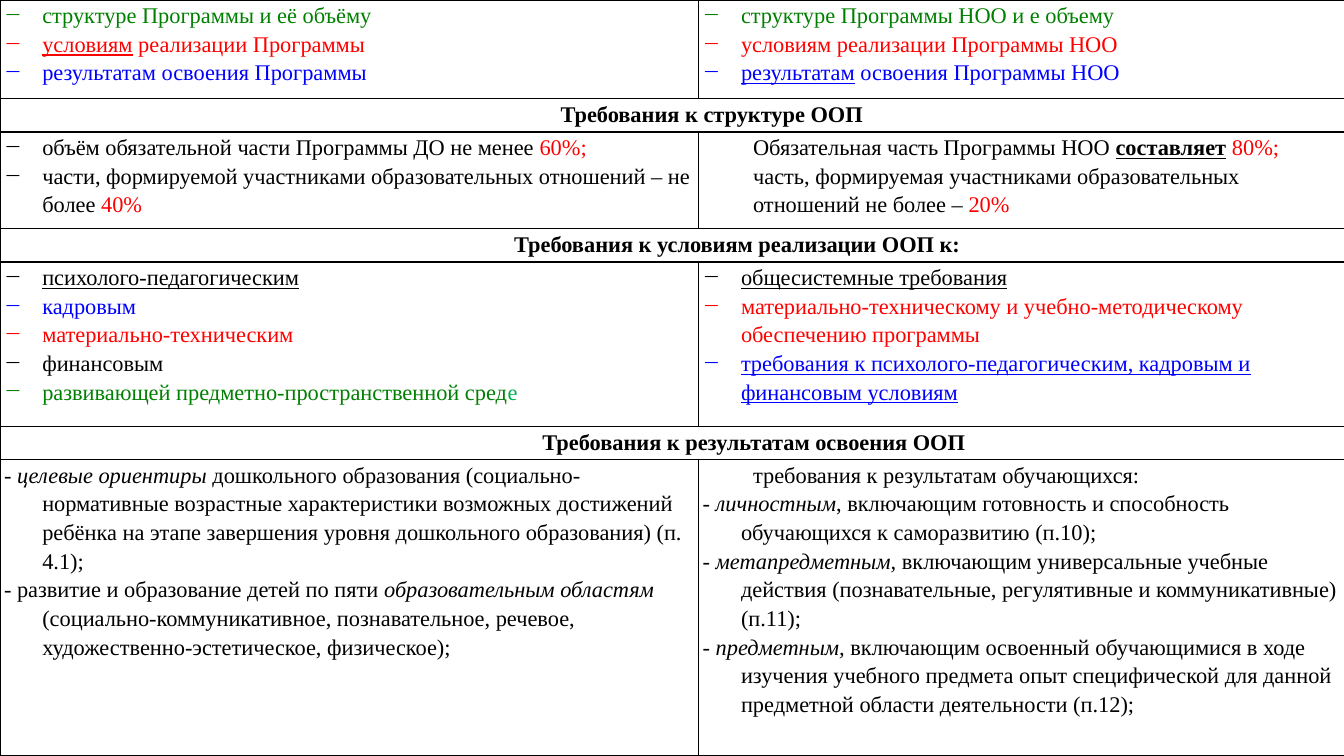
from pptx import Presentation
from pptx import util as u
from pptx.dml.color import RGBColor
from pptx.oxml import parse_xml
from pptx.oxml.ns import nsdecls
from lxml import etree

INK = {"black": "000000", "green": "008000", "red": "FF0000",
       "blue": "0000FF", "teal": "00B050", "white": "FFFFFF"}
FONT = "Times New Roman"

# Paragraph kinds: left margin, first-line indent, bullet
KINDS = {"dash": (0.38, -0.38, "−"), "hang": (0.38, -0.38, None), "plain": (0.5, 0, None)}

# A paragraph is (kind, run, run, ...); a run is (text, colour, styles)
# A row with one entry is a heading: (text, left margin)
ROWS = [
    (0.98, [
        [("dash", ("структуре Программы и её объёму", "green", "")),
         ("dash", ("условиям", "red", "u"), (" реализации Программы", "red", "")),
         ("dash", ("результатам освоения Программы", "blue", ""))],
        [("dash", ("структуре Программы НОО и е объему", "green", "")),
         ("dash", ("условиям реализации Программы НОО", "red", "")),
         ("dash", ("результатам", "blue", "u"), (" освоения Программы НОО", "blue", ""))],
    ]),
    (0.33, [("Требования к структуре ООП", 5.52)]),
    (0.96, [
        [("dash", ("объём обязательной части Программы ДО не менее ", "black", ""),
          ("60%;", "red", "")),
         ("dash", ("части, формируемой участниками образовательных отношений – не более ",
                   "black", ""), ("40%", "red", ""))],
        [("plain", ("Обязательная часть Программы НОО ", "black", ""),
          ("составляет", "black", "bu"), (" ", "black", "b"), ("80%;", "red", "")),
         ("plain", ("часть, формируемая участниками образовательных отношений не более – ",
                    "black", ""), ("20%", "red", ""))],
    ]),
    (0.33, [("Требования к условиям реализации ООП к:", 5.06)]),
    (1.63, [
        [("dash", ("психолого-педагогическим", "black", "u")),
         ("dash", ("кадровым", "blue", "")),
         ("dash", ("материально-техническим", "red", "")),
         ("dash", ("финансовым", "black", "")),
         ("dash", ("развивающей предметно-пространственной сред", "green", ""),
          ("е", "teal", ""))],
        [("dash", ("общесистемные требования", "black", "u")),
         ("dash", ("материально-техническому и учебно-методическому обеспечению программы",
                   "red", "")),
         ("dash", ("требования к психолого-педагогическим, кадровым и финансовым условиям",
                   "blue", "u"))],
    ]),
    (0.33, [("Требования к результатам освоения ООП", 5.34)]),
    (2.94, [
        [("hang", ("- целевые ориентиры", "black", "i"),
          (" дошкольного образования (социально-нормативные возрастные характеристики "
           "возможных достижений ребёнка на этапе завершения уровня дошкольного "
           "образования) (п. 4.1);", "black", "")),
         ("hang", ("- развитие и образование детей по пяти ", "black", ""),
          ("образовательным областям", "black", "i"),
          (" (социально-коммуникативное, познавательное, речевое, "
           "художественно-эстетическое, физическое);", "black", ""))],
        [("plain", ("требования к результатам обучающихся:", "black", "")),
         ("hang", ("- личностным", "black", "i"),
          (", включающим готовность и способность обучающихся к саморазвитию (п.10);",
           "black", "")),
         ("hang", ("- метапредметным, ", "black", "i"),
          ("включающим универсальные учебные действия (познавательные, регулятивные "
           "и коммуникативные) (п.11);", "black", "")),
         ("hang", ("- предметным, ", "black", "i"),
          ("включающим освоенный обучающимися в ходе изучения учебного предмета опыт "
           "специфической для данной предметной области деятельности (п.12);",
           "black", ""))],
    ]),
]


def add_par(frame, first, left, indent, mark, runs):
    par = frame.paragraphs[0] if first else frame.add_paragraph()
    par.line_spacing = 1.15
    props = par._p.get_or_add_pPr()
    props.set("marL", str(u.Inches(left)))
    props.set("indent", str(u.Inches(indent)))
    if mark:
        props.append(parse_xml(f'<a:buChar {nsdecls("a")} char="{mark}"/>'))
    for words, ink, style in runs:
        run = par.add_run()
        run.text = words
        font = run.font
        font.name, font.size = FONT, u.Pt(16)
        font.color.rgb = RGBColor.from_string(INK[ink])
        font.bold, font.italic, font.underline = (s in style for s in "biu")


def frame_cell(cell):
    cell.margin_left = cell.margin_right = u.Inches(0.04)
    cell.margin_top = cell.margin_bottom = 0
    cell.fill.solid()
    cell.fill.fore_color.rgb = RGBColor.from_string(INK["white"])
    props = cell._tc.get_or_add_tcPr()
    sides = "RTB" if cell.is_spanned else "LRTB"
    for spot, side in enumerate(sides):
        props.insert(spot, parse_xml(
            f'<a:ln{side} {nsdecls("a")} w="{u.Pt(1)}"><a:solidFill>'
            f'<a:srgbClr val="{INK["black"]}"/></a:solidFill></a:ln{side}>'))


# Slide
deck = Presentation()
deck.slide_width, deck.slide_height = u.Inches(13.33), u.Inches(7.5)
slide = deck.slides.add_slide(deck.slide_layouts[6])

# Table grid
table = slide.shapes.add_table(len(ROWS), 2, 0, 0, u.Inches(13.33), u.Inches(7.5)).table
table.first_row = table.horz_banding = False
for col, width in zip(table.columns, (6.93, 6.41)):
    col.width = u.Inches(width)

# Rows: headings span both columns, the others hold two lists
for r, (height, parts) in enumerate(ROWS):
    table.rows[r].height = u.Inches(height)
    if len(parts) == 1:
        table.cell(r, 0).merge(table.cell(r, 1))
        title, left = parts[0]
        add_par(table.cell(r, 0).text_frame, True, left, 0, None, [(title, "black", "b")])
    else:
        for c, pars in enumerate(parts):
            for n, (kind, *runs) in enumerate(pars):
                add_par(table.cell(r, c).text_frame, n == 0, *KINDS[kind], runs)
    for c in range(2):
        frame_cell(table.cell(r, c))

deck.save("out.pptx")
